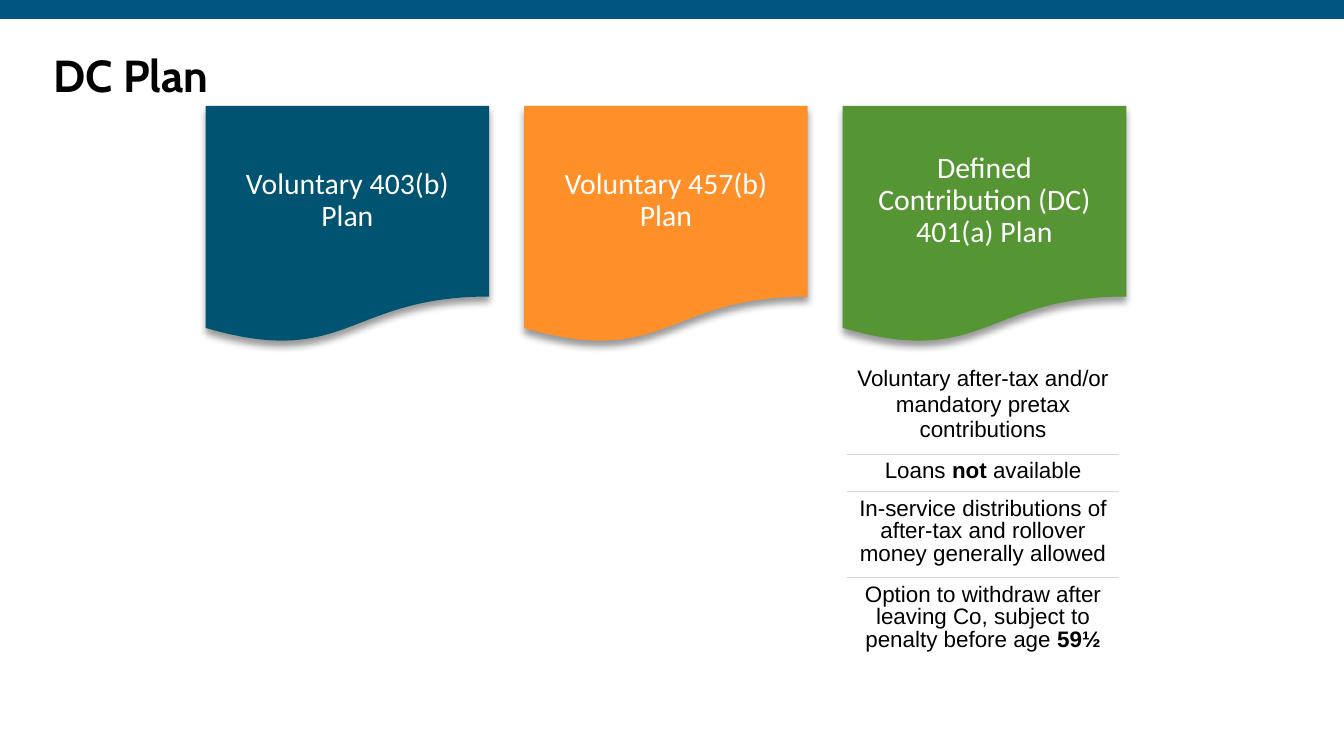
import pptx
import pptx.util
import pptx.oxml
import pptx.dml.color
import pptx.enum.shapes
import pptx.enum.text

Inches, Pt = pptx.util.Inches, pptx.util.Pt
SHAPE = pptx.enum.shapes.MSO_SHAPE
ALIGN = pptx.enum.text.PP_ALIGN
MIDDLE = pptx.enum.text.MSO_ANCHOR.MIDDLE
NS = 'xmlns:a="http://schemas.openxmlformats.org/drawingml/2006/main"'

WIDE = 10
HIGH = WIDE * 9 / 16
HEX = {"bar": "005581", "blue": "005472", "orange": "FF8F28",
       "green": "559534", "rule": "D8D8D8", "black": "000000",
       "white": "FFFFFF"}
FONTS = {
    "title": {"name": "Cabin", "size": Pt(24), "bold": True},
    "plan": {"name": "Calibri", "size": Pt(15.9)},
    "fact": {"name": "Arial", "size": Pt(12), "bold": False},
}
PLANS = [("Voluntary 403(b) Plan", "blue"),
         ("Voluntary 457(b) Plan", "orange"),
         ("Defined Contribution (DC) 401(a) Plan", "green")]
# Each fact: row height, line spacing, then runs of (text, bold)
FACTS = [
    (0.7, 1.0, [("Voluntary after-tax and/or mandatory pretax contributions",
                 False)]),
    (0.28, 0.9, [("Loans ", False), ("not", True), (" available", False)]),
    (0.64, 0.9, [("In-service distributions of after-tax and rollover money "
                  "generally allowed", False)]),
    (0.64, 0.9, [("Option to withdraw after leaving Co, subject to penalty "
                  "before age ", False), ("59½", True)]),
]
GRID = {"left": 1.53, "top": HIGH * 0.14, "step": 2.37,
        "wide": 2.11, "high": 1.77}


def paint(fill, key):
    fill.solid()
    fill.fore_color.rgb = pptx.dml.color.RGBColor.from_string(HEX[key])


def style(item, **vals):
    for key, val in vals.items():
        setattr(item, key, val)


def write(para, text, font, ink, **vals):
    run = para.add_run()
    run.text = text
    style(run.font, **{**FONTS[font], **vals})
    paint(run.font.fill, ink)


def pad(item, side, end):
    style(item, margin_left=Inches(side), margin_right=Inches(side),
          margin_top=Inches(end), margin_bottom=Inches(end))


def block(slide, kind, box, key):
    shape = slide.shapes.add_shape(kind, *map(Inches, box))
    shape.shadow.inherit = False
    paint(shape.fill, key)
    shape.line.fill.background()
    return shape


def head(slide, box, text):
    title = slide.shapes.title
    left, top, wide, high = map(Inches, box)
    style(title, left=left, top=top, width=wide, height=high)
    frame = title.text_frame
    style(frame, vertical_anchor=MIDDLE, word_wrap=True,
          auto_size=pptx.enum.text.MSO_AUTO_SIZE.NONE)
    pad(frame, 0.1, 0.05)
    para = frame.paragraphs[0]
    para.alignment = ALIGN.LEFT
    write(para, text, "title", "black")


def shade(shape):
    """Cast a soft shadow straight down."""
    glow = shape._element.spPr.find(pptx.oxml.ns.qn("a:effectLst"))
    glow.append(pptx.oxml.parse_xml(
        f'<a:outerShdw {NS} blurRad="{Pt(4)}" dist="{Pt(3)}" dir="5400000" '
        f'algn="ctr" rotWithShape="0"><a:srgbClr val="{HEX["black"]}">'
        '<a:alpha val="40000"/></a:srgbClr></a:outerShdw>'))


def banner(slide, box, text, key):
    shape = block(slide, SHAPE.FLOWCHART_DOCUMENT, box, key)
    shade(shape)
    frame = shape.text_frame
    style(frame, word_wrap=True, vertical_anchor=MIDDLE)
    pad(frame, 0.22, 0.22)
    para = frame.paragraphs[0]
    style(para, alignment=ALIGN.CENTER, line_spacing=0.9)
    write(para, text, "plan", "white")


def rule(cell, side):
    """Draw a thin line on the T (top) or B (bottom) side of a cell."""
    cell._tc.get_or_add_tcPr().insert(0, pptx.oxml.parse_xml(
        f'<a:ln{side} {NS} w="{Pt(0.5)}"><a:solidFill><a:srgbClr '
        f'val="{HEX["rule"]}"/></a:solidFill></a:ln{side}>'))


def facts(slide, box, rows):
    table = slide.shapes.add_table(len(rows), 1, *map(Inches, box)).table
    style(table, first_row=False, horz_banding=False)
    for i, (high, space, runs) in enumerate(rows):
        table.rows[i].height = Inches(high)
        cell = table.cell(i, 0)
        cell.fill.background()
        pad(cell, 0.01, 0.05)
        if i < len(rows) - 1:
            rule(cell, "B")
        if i > 0:
            rule(cell, "T")
        para = cell.text_frame.paragraphs[0]
        style(para, alignment=ALIGN.CENTER, line_spacing=space)
        for text, bold in runs:
            write(para, text, "fact", "black", bold=bold)


def main():
    deck = pptx.Presentation()
    style(deck, slide_width=Inches(WIDE), slide_height=Inches(HIGH))
    slide = deck.slides.add_slide(deck.slide_layouts[5])
    block(slide, SHAPE.RECTANGLE, (0, 0, WIDE, HIGH / 40), "bar")
    head(slide, (0.3, 0.33, 9.2, 0.45), "DC Plan")
    for i, (text, key) in enumerate(PLANS):
        left = GRID["left"] + i * GRID["step"]
        banner(slide, (left, GRID["top"], GRID["wide"], GRID["high"]),
               text, key)
    top = GRID["top"] + GRID["high"] + 0.12
    high = sum(row[0] for row in FACTS)
    facts(slide, (left + 0.04, top, GRID["wide"] - 0.1, high), FACTS)
    deck.save("out.pptx")


if __name__ == "__main__":
    main()
